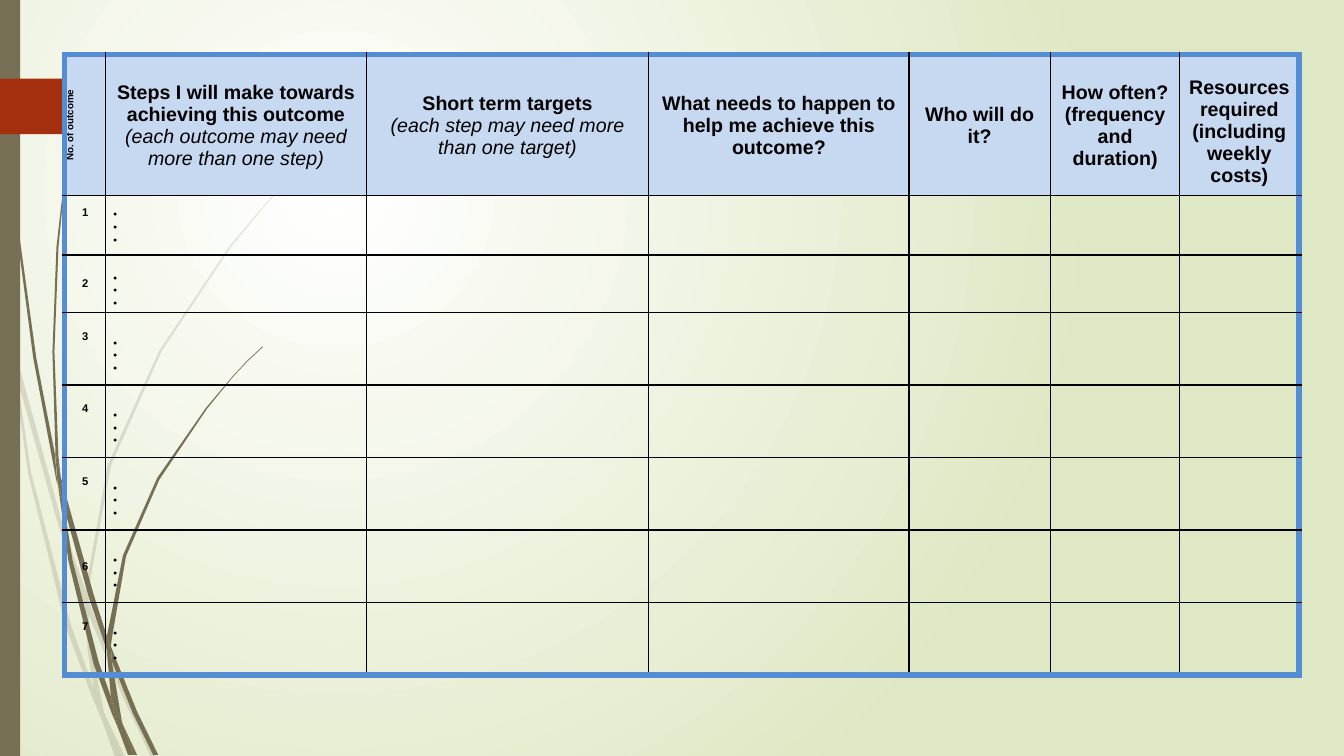
from dataclasses import dataclass

from lxml import etree
from pptx import Presentation
from pptx import util as u
from pptx.dml.color import RGBColor
from pptx.enum import shapes, text
from pptx.oxml.ns import qn

# Slide size and a square grid, 75 rows high
WIDTH, HEIGHT = u.Inches(13.33), u.Inches(7.5)
GRID_ROWS = 75

WHITE = RGBColor(0xFF, 0xFF, 0xFF)
BLACK = RGBColor(0, 0, 0)
PALE_GREEN = RGBColor(0xDF, 0xE8, 0xC4)
OLIVE = RGBColor(0x76, 0x6F, 0x54)
RUST = RGBColor(0xA5, 0x30, 0x10)
HEADER_BLUE = RGBColor(0xC6, 0xD9, 0xF1)
FRAME_BLUE = RGBColor(0x54, 0x8D, 0xD4)

FONT = "Arial"
NBSP = " "


def grid(units: float) -> int:
    return round(HEIGHT * units / GRID_ROWS)


@dataclass(frozen=True)
class Grass:
    """Blades of one opacity; each is an outline of (column, row) points."""
    opacity: int
    blades: list[list[tuple[float, float]]]


@dataclass(frozen=True)
class Heading:
    width: float
    lines: list[str]
    size: float = 14
    italic_last: bool = False
    vertical: bool = False
    top_gap: float = 0.2


@dataclass(frozen=True)
class Outcome:
    number: int
    height: float
    number_lift: float = 2.5
    bullet_drop: float = 1.65


FAR_GRASS = Grass(20, [
    [(1.1, 35), (0.9, 32.2), (0, 28.2), (0, 29.9), (1, 34.4)],
    [(5.8, 52.2), (8.4, 59.9), (8.5, 58.6), (6.2, 52), (1.4, 34.5), (1.7, 37.6)],
    [(9.2, 60.7), (8.8, 59.6), (8.8, 61), (12.3, 69.4), (15, 75.1), (15.5, 75.1), (12.7, 69.2)],
    [(11.9, 75.1), (12.4, 75.1), (10.5, 71.1)],
    [(9.3, 68.3), (7, 61.9), (3.1, 46.9), (1.7, 37.6), (1.1, 35), (2.8, 47), (6.5, 62.1),
     (9.2, 69.3), (10.1, 71.4), (9.9, 70.7)],
    [(8.4, 59.9), (8.7, 64.6), (9.3, 68.3), (9.6, 69.2), (10.5, 71.1), (10.3, 70.6),
     (9.1, 64.6), (8.8, 61), (8.8, 60.8)],
    [(8.8, 58.4), (11, 46.2), (16, 34.9), (22.9, 24.5), (26.8, 19.8), (29, 17.5), (31.2, 15.4),
     (31.2, 15.3), (28.9, 17.5), (26.8, 19.7), (22.8, 24.4), (15.8, 34.8), (10.7, 46.1),
     (8.5, 58.4), (8.5, 58.6), (8.8, 59.6)],
    [(10.1, 71.4), (11.4, 75.1), (11.9, 75.1)],
    [(8.8, 60.8), (8.8, 61), (8.8, 59.6), (8.5, 58.6), (8.4, 59.9)],
    [(9.6, 69.2), (9.3, 68.3), (9.9, 70.7), (10.1, 71.4), (11.9, 75.1), (10.5, 71.1)],
])
NEAR_GRASS = Grass(100, [
    [(0.7, 11), (1.7, 23.3), (3.3, 35.5), (5.6, 47.7), (5.7, 48.1), (5.5, 45.7), (5.5, 45.3),
     (3.6, 35.5), (1.9, 23.2), (0.8, 10.9), (0.5, 4.8), (0.4, 0), (0.3, 0), (0.4, 4.8)],
    [(8.8, 59.2), (10.6, 64.5), (10.6, 63.3), (10.6, 63.1), (9.3, 59), (6, 47.2), (6.4, 50.5)],
    [(11.3, 64.9), (11, 64.1), (11.1, 65.6), (13.2, 70.8), (15.2, 74.9), (15.7, 74.9),
     (13.6, 70.6)],
    [(11, 69.1), (9.8, 65.7), (7.2, 55.6), (6.4, 50.5), (5.7, 47.7), (6.8, 55.7), (9.3, 65.9),
     (11.1, 70.8), (11.7, 72.2), (11.6, 71.7)],
    [(6, 47.2), (5.8, 45.3), (5.4, 34.9), (5.8, 24.5), (6.3, 19.3), (7, 14.1), (6.2, 19.3),
     (5.6, 24.5), (5.2, 34.9), (5.5, 44.9)],
    [(13.3, 74.9), (13.6, 74.9), (12.2, 71.9)],
    [(5.7, 47.7), (6.4, 50.5), (6, 47.2), (5.5, 44.9), (5.5, 45.3)],
    [(11.1, 63.3), (12.5, 55.2), (15.8, 47.6), (20.5, 40.6), (23.1, 37.4), (24.5, 35.9),
     (26.1, 34.4), (26, 34.4), (24.5, 35.8), (23.1, 37.3), (20.4, 40.5), (15.6, 47.4),
     (12.2, 55.1), (10.6, 63.1), (11, 64.1)],
    [(11.7, 72.2), (12.7, 74.9), (13.1, 74.9)],
    [(10.6, 64.5), (11, 69.1), (11.6, 70.6), (12.2, 71.9), (12.1, 71.6), (11.1, 65.6),
     (10.9, 65.1)],
    [(10.6, 64.5), (10.9, 65.1), (11.1, 65.6), (11, 64.1), (10.6, 63.1)],
    [(11.6, 70.6), (11, 69.1), (11.6, 71.7), (11.7, 72.2), (13, 74.9), (13.3, 74.9),
     (12.2, 71.9)],
])

HEADINGS = [
    Heading(4.1, ["No. of outcome"], size=7, vertical=True, top_gap=0),
    Heading(25.84, ["Steps I will make towards achieving this outcome",
                    "(each outcome may need more than one step)"], italic_last=True),
    Heading(28.02, ["Short term targets", "(each step may need more than one target)"],
            italic_last=True),
    Heading(25.8, ["What needs to happen to help me achieve this outcome?"]),
    Heading(14.02, ["Who will do it?"]),
    Heading(12.85, ["How often?", "(frequency and duration)"]),
    Heading(11.8, ["Resources required (including weekly costs)"], top_gap=1.25),
]
HEADER_HEIGHT = 14
OUTCOMES = [Outcome(1, 5.9, bullet_drop=0.7), Outcome(2, 5.7, number_lift=0),
            *(Outcome(n, 7.2, number_lift=0 if n == 6 else 2.5) for n in range(3, 8))]


def paint(shape, color: RGBColor) -> None:
    shape.shadow.inherit = False
    shape.fill.solid()
    shape.fill.fore_color.rgb = color
    shape.line.fill.background()


def draw_grass(slide, grass: Grass) -> None:
    for blade in grass.blades:
        outline = [(grid(column), grid(row)) for column, row in blade]
        builder = slide.shapes.build_freeform(*outline[0])
        builder.add_line_segments(outline[1:], close=True)
        leaf = builder.convert_to_shape()
        paint(leaf, OLIVE)
        if grass.opacity < 100:
            tint = leaf.fill._xPr.find(qn("a:solidFill"))[0]
            etree.SubElement(tint, qn("a:alpha"), val=str(grass.opacity * 1000))


def draw_background(slide) -> None:
    fill = slide.background.fill
    fill.gradient()
    for stop, color in zip(fill.gradient_stops, (WHITE, PALE_GREEN)):
        stop.color.rgb = color
    gradient = next(slide.element.iter(qn("a:gradFill")))
    gradient.remove(gradient.find(qn("a:lin")))
    glow = etree.SubElement(gradient, qn("a:path"), path="circle")
    etree.SubElement(glow, qn("a:fillToRect"), l="50000", t="50000", r="100000", b="100000")


def add_borders(cell, outer: dict[str, bool]) -> None:
    properties = cell._tc.get_or_add_tcPr()
    for order, (side, is_outer) in enumerate(outer.items()):
        width = u.Pt(4.5 if is_outer else 1)
        border = etree.Element(qn(f"a:ln{side}"), w=str(width))
        solid = etree.SubElement(border, qn("a:solidFill"))
        etree.SubElement(solid, qn("a:srgbClr"), val=str(FRAME_BLUE if is_outer else BLACK))
        properties.insert(order, border)


def write_lines(cell, lines: list[str], size: float, align: text.PP_ALIGN) -> list:
    cell.text = "\n".join(lines)
    for paragraph in cell.text_frame.paragraphs:
        paragraph.alignment = align
        font = paragraph.font
        font.name, font.size, font.bold = FONT, u.Pt(size), True
        font.color.rgb = BLACK
    return list(cell.text_frame.paragraphs)


def write_heading(cell, heading: Heading) -> None:
    paragraphs = write_lines(cell, heading.lines, heading.size, text.PP_ALIGN.CENTER)
    cell.margin_top = grid(heading.top_gap)
    if heading.italic_last:
        paragraphs[-1].font.bold, paragraphs[-1].font.italic = False, True
    if heading.vertical:
        cell._tc.get_or_add_tcPr().set("vert", "vert270")


def write_outcome(number_cell, steps_cell, outcome: Outcome) -> None:
    write_lines(number_cell, [str(outcome.number)], 8, text.PP_ALIGN.CENTER)
    number_cell.margin_bottom = grid(outcome.number_lift)
    steps_cell.margin_top = grid(outcome.bullet_drop)
    for step in write_lines(steps_cell, [NBSP] * 3, 8, text.PP_ALIGN.LEFT):
        properties = step._p.get_or_add_pPr()
        properties.set("marL", str(grid(1)))
        properties.set("indent", str(-grid(1)))
        properties.insert(0, etree.Element(qn("a:buChar"), char="•"))


def draw_plan(slide) -> None:
    widths = [heading.width for heading in HEADINGS]
    heights = [HEADER_HEIGHT] + [outcome.height for outcome in OUTCOMES]
    plan = slide.shapes.add_table(len(heights), len(widths), grid(6.4), grid(5.4),
                                  grid(sum(widths)), grid(sum(heights))).table
    plan.first_row = plan.horz_banding = False
    for column, width in zip(plan.columns, widths):
        column.width = grid(width)
    for r, height in enumerate(heights):
        plan.rows[r].height = grid(height)
        for c in range(len(widths)):
            cell = plan.cell(r, c)
            cell.vertical_anchor = text.MSO_ANCHOR.MIDDLE
            cell.margin_left = cell.margin_right = grid(0.75)
            cell.margin_top = cell.margin_bottom = 0
            if r == 0:
                cell.fill.solid()
                cell.fill.fore_color.rgb = HEADER_BLUE
                write_heading(cell, HEADINGS[c])
            else:
                cell.fill.background()
            add_borders(cell, {"L": c == 0, "R": c == len(widths) - 1,
                               "T": r == 0, "B": r == len(heights) - 1})
    for r, outcome in enumerate(OUTCOMES, start=1):
        write_outcome(plan.cell(r, 0), plan.cell(r, 1), outcome)


def main() -> None:
    deck = Presentation()
    deck.slide_width, deck.slide_height = WIDTH, HEIGHT
    slide = deck.slides.add_slide(deck.slide_layouts[6])

    # Backdrop: glow, grass, side bar and flag
    draw_background(slide)
    draw_grass(slide, FAR_GRASS)
    draw_grass(slide, NEAR_GRASS)
    side_bar = slide.shapes.add_shape(shapes.MSO_SHAPE.RECTANGLE, 0, 0, grid(2), HEIGHT)
    paint(side_bar, OLIVE)
    flag = slide.shapes.add_shape(shapes.MSO_SHAPE.PENTAGON, 0, grid(7.8), grid(17.4), grid(5.5))
    paint(flag, RUST)

    # Outcome planning table
    draw_plan(slide)
    deck.save("out.pptx")


if __name__ == "__main__":
    main()
